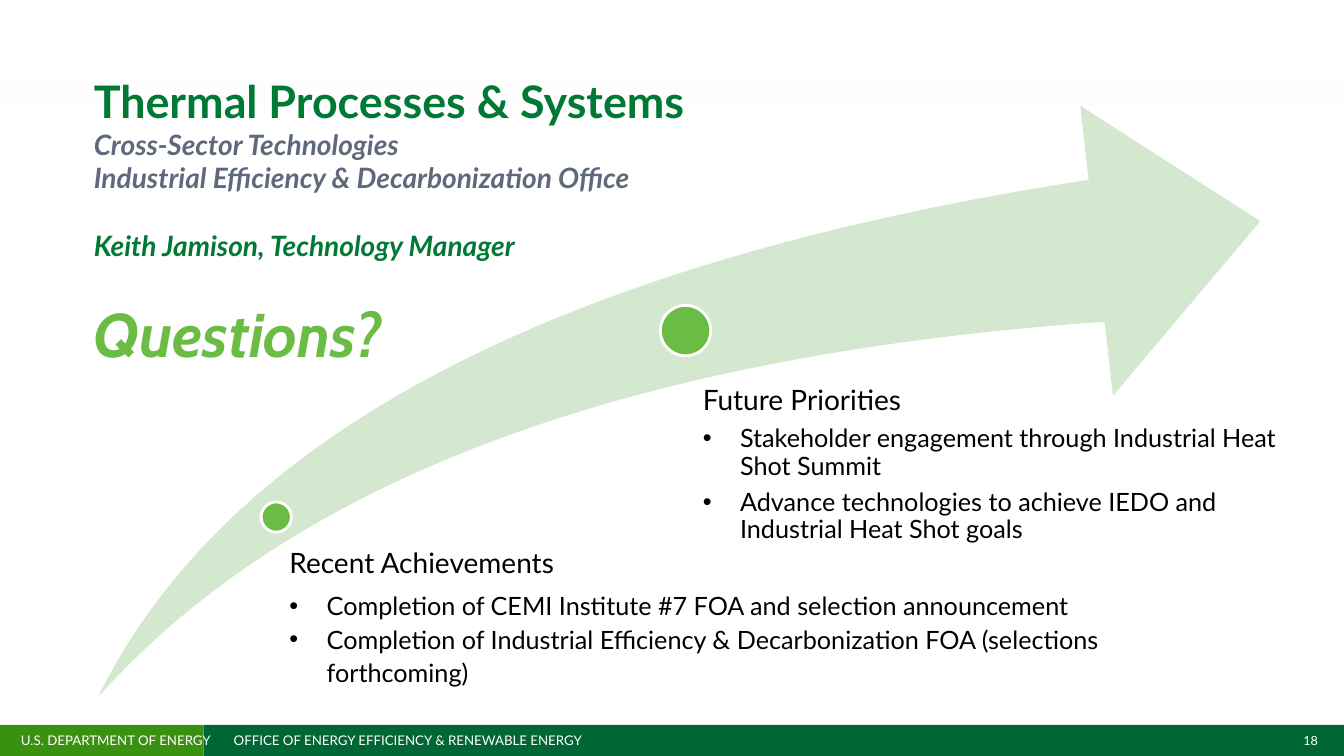
from lxml.etree import SubElement
from pptx import Presentation
from pptx.dml.color import RGBColor
from pptx.enum.shapes import MSO_SHAPE as Shape
from pptx.enum.text import MSO_ANCHOR as Anchor, MSO_AUTO_SIZE as AutoSize, PP_ALIGN as Align
from pptx.oxml.ns import qn
from pptx.util import Pt

PX = 9144
FOREST = RGBColor(0x00, 0x66, 0x33)
LEAF = RGBColor(0x3A, 0x90, 0x11)
GREEN = RGBColor(0x00, 0x79, 0x34)
SLATE = RGBColor(0x5E, 0x6A, 0x7B)
LIME = RGBColor(0x6A, 0xBC, 0x45)
PALE = RGBColor(0xD4, 0xE7, 0xCF)
STRIP = RGBColor(0xFE, 0xFE, 0xFE)
WHITE = RGBColor(0xFF, 0xFF, 0xFF)
BLACK = RGBColor(0x00, 0x00, 0x00)


def px(*lengths):
    """Turn px lengths into EMU."""
    return [length * PX for length in lengths]


def write(frame, text, size, color, font="Lato", bold=False, italic=False,
          align=Align.LEFT, spacing=1.0, before=0, after=0, bullet=False):
    """Add one formatted paragraph to a text frame, filling the empty first one."""
    first = frame.paragraphs[0]
    paragraph = first if not first.runs else frame.add_paragraph()
    paragraph.alignment = align
    paragraph.line_spacing = spacing
    paragraph.space_before, paragraph.space_after = Pt(before), Pt(after)
    run = paragraph.add_run()
    run.text = text
    run.font.name, run.font.size = font, Pt(size)
    run.font.bold, run.font.italic = bold, italic
    run.font.color.rgb = color
    properties = paragraph._p.get_or_add_pPr()
    indent = 37 * PX if bullet else 0
    properties.set("marL", str(indent))
    properties.set("indent", str(-indent))
    if bullet:
        SubElement(properties, qn("a:buFont"), typeface="Arial")
        SubElement(properties, qn("a:buChar"), char="•")
    else:
        SubElement(properties, qn("a:buNone"))


def prepare(frame, left=10, top=5, right=10, bottom=5, anchor=Anchor.TOP):
    """Set insets, wrapping and anchor of a text frame."""
    frame.word_wrap = True
    frame.auto_size = AutoSize.NONE
    frame.vertical_anchor = anchor
    frame.margin_left, frame.margin_top, frame.margin_right, frame.margin_bottom = px(
        left, top, right, bottom)
    return frame


def place(holder, box):
    """Move a placeholder to its box."""
    holder.left, holder.top, holder.width, holder.height = px(*box)


def draw(slide, preset, box, fill, line=None):
    """Draw a flat preset shape."""
    shape = slide.shapes.add_shape(preset, *px(*box))
    shape.shadow.inherit = False
    shape.fill.solid()
    shape.fill.fore_color.rgb = fill
    if line is None:
        shape.line.fill.background()
    else:
        shape.line.color.rgb = line
        shape.line.width = Pt(2)
    return shape


def add_footer(slide, box):
    """Draw the two-tone footer bar with its labels and page number."""
    left, top, width, height = box
    split = 202
    draw(slide, Shape.RECTANGLE, (left + split, top, width - split, height), FOREST)
    draw(slide, Shape.RECTANGLE, (left, top, split, height), LEAF)
    labels = [
        ("U.S. DEPARTMENT OF ENERGY", 11, 220, 9.5, Align.LEFT),
        ("OFFICE OF ENERGY EFFICIENCY & RENEWABLE ENERGY", 222, 510, 9.5, Align.LEFT),
        ("18", width - 66, 66, 9, Align.CENTER),
    ]
    for text, offset, span, size, align in labels:
        label = slide.shapes.add_textbox(*px(left + offset, top, span, height))
        frame = prepare(label.text_frame, top=0, bottom=0, anchor=Anchor.MIDDLE)
        write(frame, text, size, WHITE, align=align)


def add_heading(holder, box):
    """Fill the title with programme, office, presenter and closing question."""
    place(holder, box)
    frame = prepare(holder.text_frame)
    write(frame, "Thermal Processes & Systems", 32, GREEN, bold=True)
    for text in ("Cross-Sector Technologies",
                 "Industrial Efficiency & Decarbonization Office"):
        write(frame, text, 20, SLATE, bold=True, italic=True)
    write(frame, "Keith Jamison, Technology Manager", 20, GREEN,
          bold=True, italic=True, before=24)
    write(frame, "Questions?", 44, LIME, font="Cabin", bold=True, italic=True, before=24)


def add_arrow(slide, box):
    """Draw the rising arrow and its two milestone dots."""
    left, top, width, height = box
    swoosh = draw(slide, Shape.SWOOSH_ARROW, box, PALE)
    swoosh.adjustments[0], swoosh.adjustments[1] = 0.24, 0.29
    for x, y, size in ((162, 393, 30), (558, 198, 50)):
        draw(slide, Shape.OVAL, (left + x, top + y, size, size), LIME, line=WHITE)


def add_milestone(holder, box, heading, points, inset, spacing, heading_after, point_after):
    """Fill a body placeholder with a heading and its bullets."""
    place(holder, box)
    frame = prepare(holder.text_frame, left=inset, top=0, right=0, bottom=0)
    write(frame, heading, 20, BLACK, spacing=spacing, after=heading_after)
    for point in points:
        write(frame, point, 18, BLACK, spacing=spacing, after=point_after, bullet=True)


def main():
    """Build and save the slide."""
    deck = Presentation()
    deck.slide_width, deck.slide_height = px(1333, 750)
    slide = deck.slides.add_slide(deck.slide_layouts[3])
    title, achievements, priorities = slide.placeholders
    draw(slide, Shape.RECTANGLE, (0, 74, 1333, 31), STRIP)
    add_footer(slide, (0, 719, 1333, 31))
    add_arrow(slide, (97, 105, 1153, 587))
    add_heading(title, (83, 68, 892, 309))
    add_milestone(
        achievements, (274, 538, 922, 170), "Recent Achievements",
        ["Completion of CEMI Institute #7 FOA and selection announcement",
         "Completion of Industrial Efficiency & Decarbonization FOA (selections forthcoming)"],
        inset=13, spacing=1.1, heading_after=6, point_after=0)
    add_milestone(
        priorities, (674, 383, 617, 319), "Future Priorities",
        ["Stakeholder engagement through Industrial Heat Shot Summit",
         "Advance technologies to achieve IEDO and Industrial Heat Shot goals"],
        inset=23, spacing=0.9, heading_after=7, point_after=6.3)
    tree = slide.shapes._spTree
    for holder in (title, achievements, priorities):
        tree.append(holder._element)
    deck.save("out.pptx")


if __name__ == "__main__":
    main()
